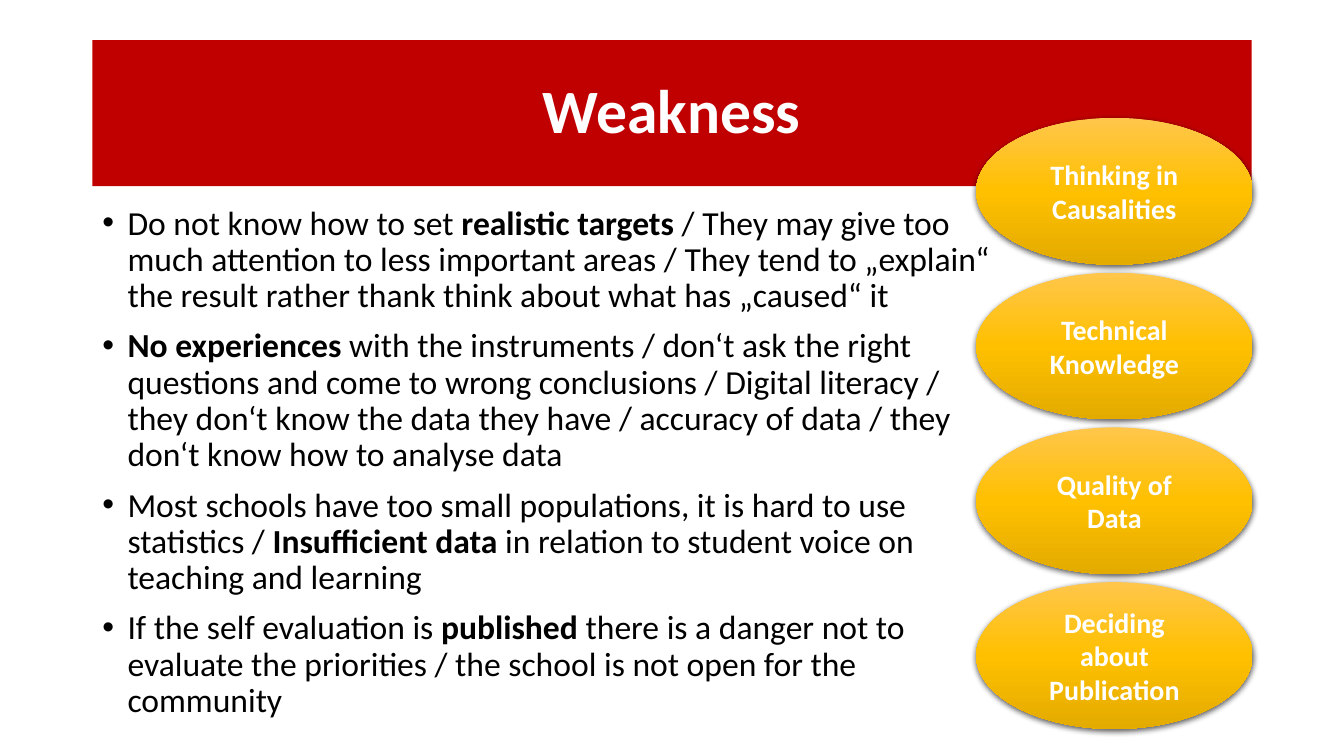
import copy

import lxml.etree
import pptx
import pptx.dml.color
import pptx.enum.shapes
import pptx.enum.text
import pptx.oxml.ns
import pptx.util

COLORS = {
    "banner": "C00000", "text": "000000", "light": "FFFFFF",
    "gold_top": "FFC64B", "gold_mid": "FFC000", "gold_low": "E3AB00",
}
BULLETS = [
    [("Do not know how to set ", False), ("realistic targets", True),
     (" / They may give too much attention to less important areas / They tend to "
      "„explain“ the result rather thank think about what has „caused“ it", False)],
    [("No experiences ", True),
     ("with the instruments / don‘t ask the right questions and come to wrong "
      "conclusions / Digital literacy / they don‘t know the data they have / "
      "accuracy of data / they don‘t know how to analyse data", False)],
    [("Most schools have too small populations, it is hard to use statistics / ", False),
     ("Insufficient data ", True),
     ("in relation to student voice on teaching and learning", False)],
    [("If the self evaluation is ", False), ("published ", True),
     ("there is a danger not to evaluate the priorities / the school is not open "
      "for the community", False)],
]
TOPICS = ["Thinking in Causalities", "Technical Knowledge", "Quality of Data",
          "Deciding about Publication"]


class Deck:
    """Holds the style and the current slide, and draws its elements."""

    font = "Calibri"

    def __init__(self, prs):
        self.s = prs.slides.add_slide(prs.slide_layouts[5])

    def color(self, name):
        return pptx.dml.color.RGBColor.from_string(COLORS[name])

    def box(self, *lengths):
        return [pptx.util.Cm(length) for length in lengths]

    def run(self, p, text, size, color, bold):
        r = p.add_run()
        r.text = text
        r.font.name = self.font
        r.font.size = pptx.util.Pt(size)
        r.font.bold = bold
        r.font.color.rgb = self.color(color)

    def centred(self, sp, text, size):
        tf = sp.text_frame
        tf.word_wrap = True
        tf.auto_size = pptx.enum.text.MSO_AUTO_SIZE.NONE
        tf.vertical_anchor = pptx.enum.text.MSO_ANCHOR.MIDDLE
        p = tf.paragraphs[0]
        p.alignment = pptx.enum.text.PP_ALIGN.CENTER
        self.run(p, text, size, "light", True)
        return p

    def title(self, text, *lengths):
        sp = self.s.shapes.title
        sp.left, sp.top, sp.width, sp.height = self.box(*lengths)
        sp.fill.solid()
        sp.fill.fore_color.rgb = self.color("banner")
        self.centred(sp, text, 44).line_spacing = 0.9

    def bullets(self, items, *lengths):
        tf = self.s.shapes.add_textbox(*self.box(*lengths)).text_frame
        tf.word_wrap = True
        for i, runs in enumerate(items):
            p = tf.add_paragraph() if i else tf.paragraphs[0]
            p.line_spacing = 0.9
            p.space_before = pptx.util.Pt(10)
            pPr = p._p.get_or_add_pPr()
            indent = pptx.util.Pt(18)
            pPr.set("marL", str(indent))
            pPr.set("indent", str(-indent))
            qn = pptx.oxml.ns.qn
            lxml.etree.SubElement(pPr, qn("a:buFont"), typeface="Arial")
            lxml.etree.SubElement(pPr, qn("a:buChar"), char="•")
            for text, bold in runs:
                self.run(p, text, 24, "text", bold)

    def ellipse(self, text, *lengths):
        kind = pptx.enum.shapes.MSO_SHAPE.OVAL
        sp = self.s.shapes.add_shape(kind, *self.box(*lengths))
        sp.line.fill.background()
        self.gradient(sp, ["gold_top", "gold_mid", "gold_low"])
        self.shadow(sp)
        self.centred(sp, text, 20)

    def gradient(self, sp, names):
        sp.fill.gradient()
        sp.fill.gradient_angle = 270
        stops = sp._element.spPr.find(".//" + pptx.oxml.ns.qn("a:gsLst"))
        stops.append(copy.deepcopy(stops[0]))
        for i, (stop, name) in enumerate(zip(sp.fill.gradient_stops, names)):
            stop.position = i / (len(names) - 1)
            stop.color.rgb = self.color(name)

    def shadow(self, sp):
        qn = pptx.oxml.ns.qn
        sp.shadow.inherit = False
        effects = sp._element.spPr.find(qn("a:effectLst"))
        outer = lxml.etree.SubElement(
            effects, qn("a:outerShdw"), blurRad=str(pptx.util.Pt(4.5)),
            dist=str(pptx.util.Pt(1.5)), dir="5400000", algn="ctr", rotWithShape="0")
        clr = lxml.etree.SubElement(outer, qn("a:srgbClr"), val=COLORS["text"])
        lxml.etree.SubElement(clr, qn("a:alpha"), val="63000")


def main():
    prs = pptx.Presentation()
    prs.slide_width, prs.slide_height = pptx.util.Cm(33.87), pptx.util.Cm(19.05)
    deck = Deck(prs)
    deck.title("Weakness", 2.33, 1.01, 29.21, 3.68)
    deck.bullets(BULLETS, 2.33, 5.07, 22.96, 12.9)
    for i, topic in enumerate(TOPICS):
        deck.ellipse(topic, 24.6, 2.97 + 3.9 * i, 6.97, 3.7)
    prs.save("out.pptx")


if __name__ == "__main__":
    main()
